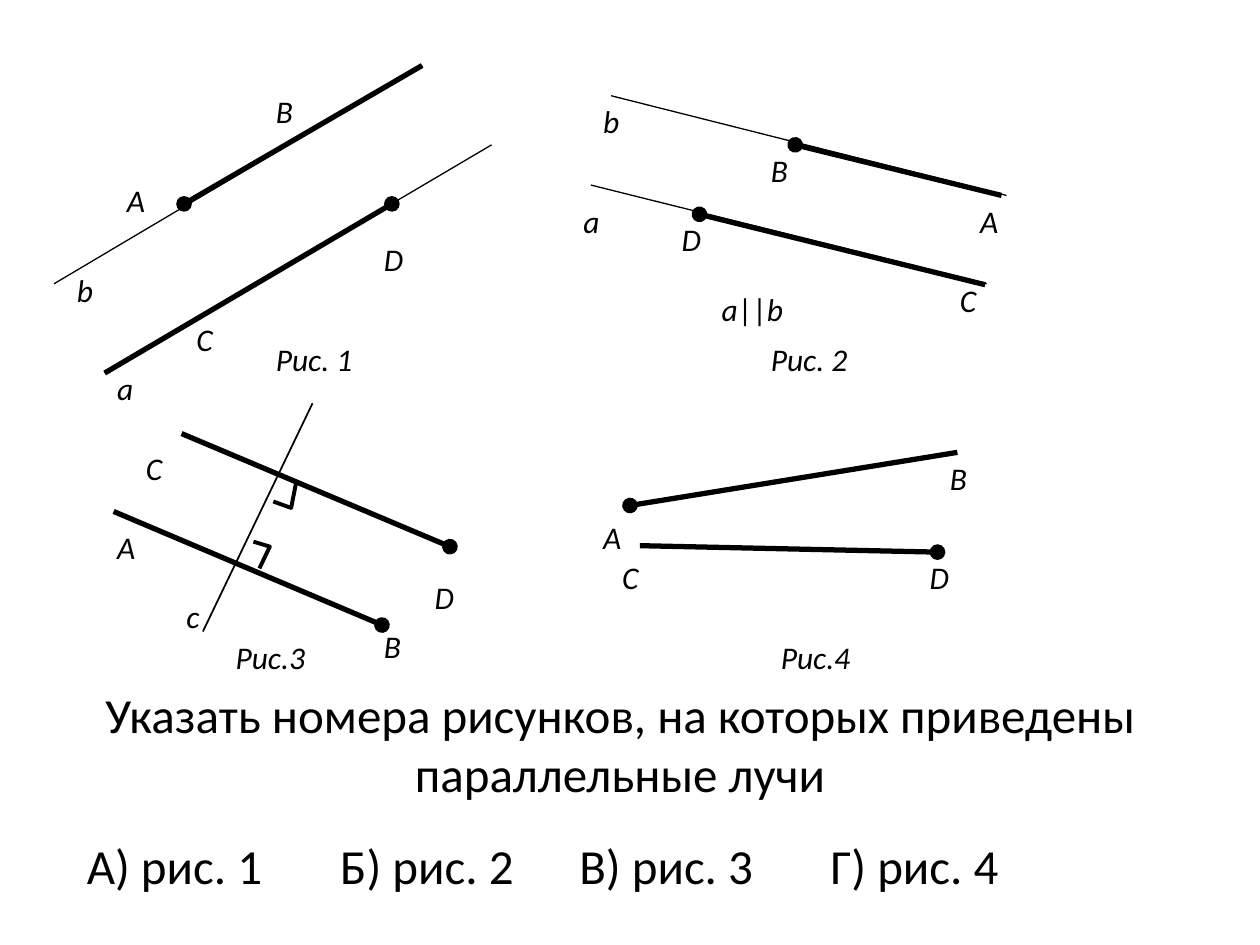
from dataclasses import dataclass

from lxml import etree
from pptx import Presentation
from pptx.dml.color import RGBColor
from pptx.enum.shapes import MSO_CONNECTOR
from pptx.enum.text import MSO_ANCHOR, MSO_AUTO_SIZE, PP_ALIGN
from pptx.oxml.ns import qn
from pptx.util import Cm, Pt

STRAIGHT = MSO_CONNECTOR.STRAIGHT
TOP, BOTTOM = MSO_ANCHOR.TOP, MSO_ANCHOR.BOTTOM
LEFT, CENTER = PP_ALIGN.LEFT, PP_ALIGN.CENTER
FIT_SHAPE = MSO_AUTO_SIZE.SHAPE_TO_FIT_TEXT

Point = tuple[float, float]


@dataclass(frozen=True)
class Theme:
    font: str = "Calibri"
    ink: RGBColor = RGBColor(0, 0, 0)
    question_size: float = 28
    label_size: float = 18
    thin: float = 0.75
    secant: float = 1
    angle: float = 2.25
    ray: float = 3


@dataclass(frozen=True)
class Line:
    start: Point
    end: Point


@dataclass(frozen=True)
class Label:
    text: str
    x: float
    y: float
    width: float = 0.86


THEME = Theme()
LABEL_HEIGHT = 1.02

CARRIERS = [
    Line((2.11, 7.52), (9.91, 2.92)),
    Line((1.09, 5.72), (8.51, 1.32)),
    Line((12.32, 1.93), (20.29, 3.94)),
    Line((11.91, 3.73), (19.89, 5.72)),
]
SECANT = Line((4.09, 12.73), (6.3, 8.13))
RAYS = [
    Line((7.9, 4.11), (2.11, 7.52)),
    Line((3.71, 4.11), (8.51, 1.32)),
    Line((16.03, 2.92), (20.19, 3.94)),
    Line((14.1, 4.32), (19.86, 5.74)),
    Line((9.07, 11.02), (3.66, 8.74)),
    Line((7.7, 12.6), (2.29, 10.31)),
    Line((12.7, 10.19), (19.3, 9.12)),
    Line((18.9, 11.13), (12.9, 11)),
]
RIGHT_ANGLES = [
    [(5.51, 10.11), (5.87, 10.24), (5.97, 9.73)],
    [(5.11, 10.92), (5.44, 11.02), (5.23, 11.46)],
]
LABELS = [
    Label("а", 2.11, 7.32), Label("b", 1.3, 5.33),
    Label("А", 2.31, 3.53), Label("В", 5.31, 1.73),
    Label("С", 3.71, 6.32), Label("D", 7.49, 4.72),
    Label("Рис. 1", 5.31, 6.73, 2.08),
    Label("а", 11.51, 3.94), Label("b", 11.91, 1.93),
    Label("А", 19.51, 3.94), Label("В", 15.29, 2.92),
    Label("С", 19.1, 5.54), Label("D", 13.49, 4.32),
    Label("Рис. 2", 15.29, 6.73, 2.08),
    Label("с", 3.51, 11.91),
    Label("А", 2.11, 10.52), Label("В", 7.49, 12.52),
    Label("С", 2.69, 8.92), Label("D", 8.51, 11.53),
    Label("Рис.3", 4.5, 12.73, 1.93),
    Label("А", 11.91, 10.31), Label("В", 18.9, 9.12),
    Label("С", 12.29, 11.13), Label("D", 18.49, 11.13),
    Label("Рис.4", 15.49, 12.73, 1.93),
]
PARALLEL = Label("||", 14.3, 5.72, 1.78)
QUESTION = "Указать номера рисунков, на которых приведены параллельные лучи"
OPTIONS = ["А) рис. 1", "Б) рис. 2", "В) рис. 3", "Г) рис. 4"]
OPTION_TABS = [5.11, 9.93, 14.99]


def style_run(r, size: float, italic: bool = False) -> None:
    r.font.name = THEME.font
    r.font.size = Pt(size)
    r.font.italic = italic
    r.font.color.rgb = THEME.ink


def draw_line(s, line: Line, weight: float, dot: bool = False) -> None:
    points = [Cm(v) for v in (*line.start, *line.end)]
    connector = s.shapes.add_connector(STRAIGHT, *points)
    connector.line.color.rgb = THEME.ink
    connector.line.width = Pt(weight)
    props = connector._element.spPr
    if dot:
        etree.SubElement(props.find(qn("a:ln")), qn("a:headEnd"), type="oval")
    etree.SubElement(props, qn("a:effectLst"))


def draw_right_angle(s, points: list[Point]) -> None:
    corner = [(Cm(x), Cm(y)) for x, y in points]
    builder = s.shapes.build_freeform(*corner[0])
    builder.add_line_segments(corner[1:], close=False)
    sp = builder.convert_to_shape()
    sp.shadow.inherit = False
    sp.fill.background()
    sp.line.color.rgb = THEME.ink
    sp.line.width = Pt(THEME.angle)


def draw_label(s, label: Label):
    box = [Cm(v) for v in (label.x, label.y, label.width, LABEL_HEIGHT)]
    tf = s.shapes.add_textbox(*box).text_frame
    tf.word_wrap = False
    tf.auto_size = FIT_SHAPE
    p = tf.paragraphs[0]
    p.text = label.text
    style_run(p.runs[0], THEME.label_size, True)
    return p


def draw_parallel_mark(s, label: Label) -> None:
    p = draw_label(s, label)
    p.text = "a"
    for text in (label.text, "b"):
        p.add_run().text = text
    for r in p.runs:
        style_run(r, THEME.label_size, r.text != label.text)


def draw_text(s, text: str, box: tuple, anchor, align):
    tf = s.shapes.add_textbox(*map(Cm, box)).text_frame
    tf.word_wrap = True
    tf.vertical_anchor = anchor
    p = tf.paragraphs[0]
    p.text = text
    p.alignment = align
    style_run(p.runs[0], THEME.question_size)
    return p


def draw_options(s) -> None:
    p = draw_text(s, "\t".join(OPTIONS), (1.5, 16.71, 21.59, 1.22), TOP, LEFT)
    props = p._p.get_or_add_pPr()
    tabs = etree.SubElement(props, qn("a:tabLst"))
    for position in OPTION_TABS:
        etree.SubElement(tabs, qn("a:tab"), pos=str(Cm(position)), algn="l")


def main() -> None:
    prs = Presentation()
    prs.slide_width, prs.slide_height = Cm(25.4), Cm(19.05)
    s = prs.slides.add_slide(prs.slide_layouts[6])
    draw_text(s, QUESTION, (1.5, 15.11, 22, 1.19), BOTTOM, CENTER)
    draw_options(s)
    for line in CARRIERS:
        draw_line(s, line, THEME.thin)
    draw_line(s, SECANT, THEME.secant)
    for points in RIGHT_ANGLES:
        draw_right_angle(s, points)
    for line in RAYS:
        draw_line(s, line, THEME.ray, dot=True)
    for label in LABELS:
        draw_label(s, label)
    draw_parallel_mark(s, PARALLEL)
    prs.save("out.pptx")


if __name__ == "__main__":
    main()
